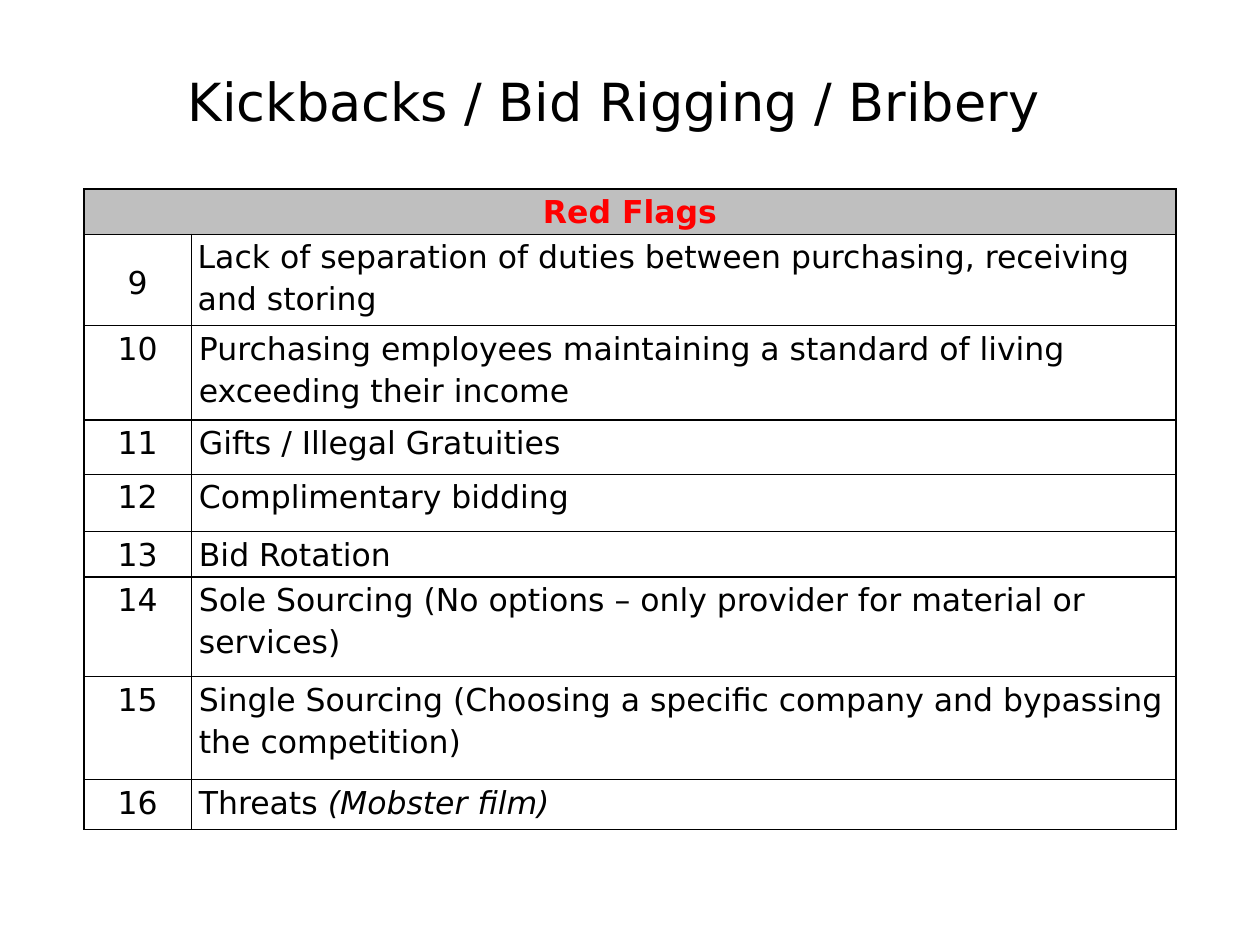
"""Build the red flags slide on kickbacks, bid rigging and bribery."""
from lxml import etree
from pptx import Presentation
from pptx.dml.color import RGBColor
from pptx.enum.text import MSO_ANCHOR, PP_ALIGN
from pptx.oxml.ns import qn
from pptx.util import Pt

CENTER, LEFT = PP_ALIGN.CENTER, PP_ALIGN.LEFT
TOP, MIDDLE = MSO_ANCHOR.TOP, MSO_ANCHOR.MIDDLE
BLACK = RGBColor(0x00, 0x00, 0x00)
RED = RGBColor(0xFF, 0x00, 0x00)
GRAY = RGBColor(0xBF, 0xBF, 0xBF)

TITLE = "Kickbacks / Bid Rigging / Bribery"
HEADING = "Red Flags"
FIRST_NUMBER = 9
FLAGS = [
    ("Lack of separation of duties between purchasing, receiving and storing", ""),
    ("Purchasing employees maintaining a standard of living exceeding their income", ""),
    ("Gifts / Illegal Gratuities", ""),
    ("Complimentary bidding", ""),
    ("Bid Rotation", ""),
    ("Sole Sourcing (No options – only provider for material or services)", ""),
    ("Single Sourcing (Choosing a specific company and bypassing the competition)", ""),
    ("Threats ", "(Mobster film)"),
]
COLUMN_WIDTHS = [61.4, 562.6]
ROW_HEIGHTS = [25.9, 52.2, 54, 31, 32.8, 26, 56.8, 58.9, 28.4]


class SlideBuilder:
    """Hold the style and the current slide, and add its elements."""

    font_name = "DejaVu Sans"
    title_size = 30
    table_size = 18
    border_width = 1

    def __init__(self, presentation):
        self.slide = presentation.slides.add_slide(presentation.slide_layouts[5])

    def style(self, paragraph, size, color, alignment, spacing):
        paragraph.alignment = alignment
        paragraph.line_spacing = spacing
        paragraph.font.name = self.font_name
        paragraph.font.size = Pt(size)
        paragraph.font.color.rgb = color

    def title(self, text, left, top, width, height):
        shape = self.slide.shapes.title
        shape.left, shape.top = Pt(left), Pt(top)
        shape.width, shape.height = Pt(width), Pt(height)
        shape.text_frame.text = text
        shape.text_frame.vertical_anchor = MIDDLE
        self.style(shape.text_frame.paragraphs[0], self.title_size, BLACK, CENTER, 0.9)

    def table(self, left, top, column_widths, row_heights):
        frame = self.slide.shapes.add_table(
            len(row_heights), len(column_widths), Pt(left), Pt(top),
            Pt(sum(column_widths)), Pt(sum(row_heights)))
        table = frame.table
        table.first_row = table.horz_banding = False
        for column, width in zip(table.columns, column_widths):
            column.width = Pt(width)
        for row, height in zip(table.rows, row_heights):
            row.height = Pt(height)
        for cell in table.iter_cells():
            self.borders(cell)
            cell.fill.background()
        return table

    def borders(self, cell):
        properties = cell._tc.get_or_add_tcPr()
        for side in ("lnL", "lnR", "lnT", "lnB"):
            line = etree.SubElement(properties, qn(f"a:{side}"), w=str(Pt(self.border_width)))
            fill = etree.SubElement(line, qn("a:solidFill"))
            etree.SubElement(fill, qn("a:srgbClr"), val=str(BLACK))

    def cell(self, cell, text, italic_text="", alignment=LEFT, color=BLACK,
             anchor=TOP, inset=4.3, spacing=1.15):
        cell.margin_left = cell.margin_right = Pt(inset)
        cell.margin_top = cell.margin_bottom = 0
        cell.vertical_anchor = anchor
        paragraph = cell.text_frame.paragraphs[0]
        paragraph.add_run().text = text
        if italic_text:
            run = paragraph.add_run()
            run.text = italic_text
            run.font.italic = True
        self.style(paragraph, self.table_size, color, alignment, spacing)
        return paragraph


def main():
    presentation = Presentation()
    presentation.slide_width, presentation.slide_height = Pt(720), Pt(540)
    builder = SlideBuilder(presentation)
    builder.title(TITLE, 54, 30, 594, 60)

    table = builder.table(48, 108, COLUMN_WIDTHS, ROW_HEIGHTS)
    heading = table.cell(0, 0)
    heading.merge(table.cell(0, 1))
    heading.fill.solid()
    heading.fill.fore_color.rgb = GRAY
    builder.cell(heading, HEADING, alignment=CENTER, color=RED).font.bold = True

    for row, (text, italic_text) in enumerate(FLAGS, start=1):
        is_first = row == 1
        inset = 3.6 if is_first else 4.3
        builder.cell(table.cell(row, 0), str(FIRST_NUMBER + row - 1), alignment=CENTER,
                     anchor=MIDDLE if is_first else TOP, inset=inset,
                     spacing=1.2 if is_first else 1.15)
        builder.cell(table.cell(row, 1), text, italic_text, inset=inset)

    presentation.save("out.pptx")


if __name__ == "__main__":
    main()
